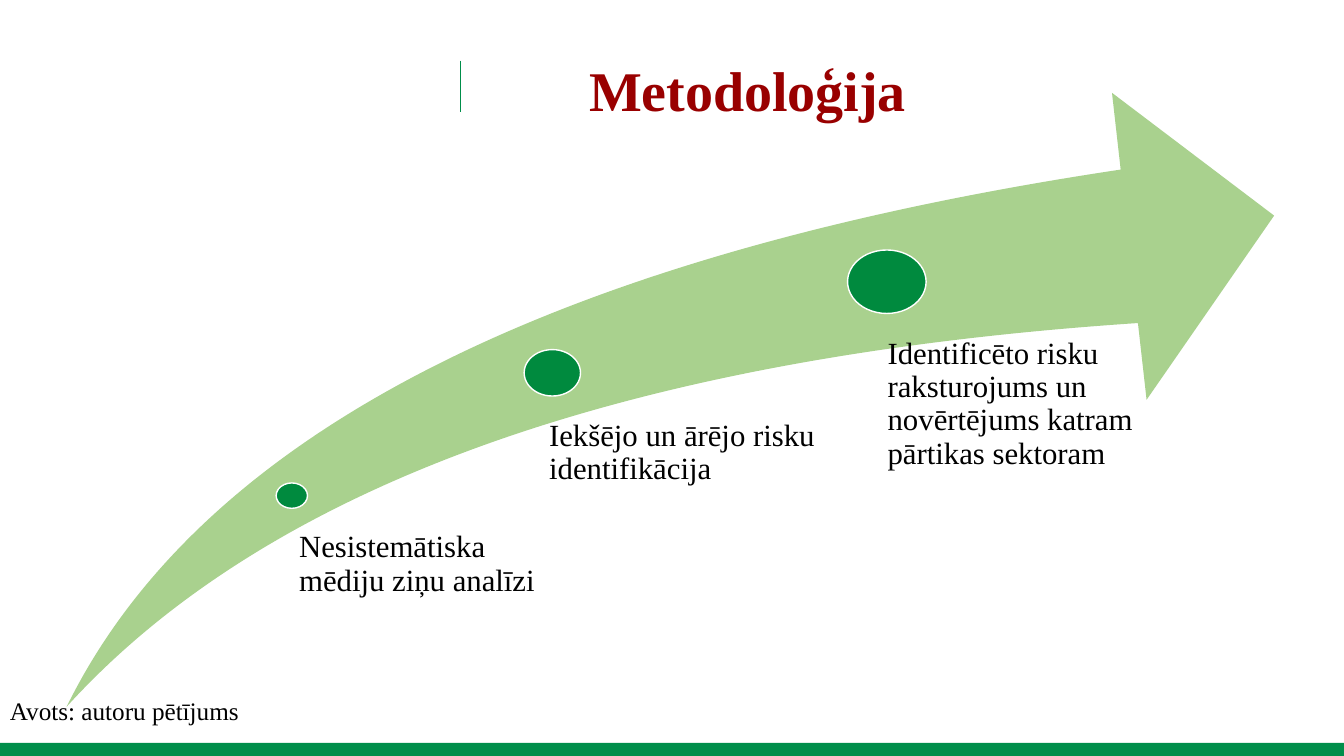
"""Build the methodology slide with a rising arrow and three steps."""
from pptx import Presentation
from pptx.dml.color import RGBColor
from pptx.enum.shapes import MSO_CONNECTOR as Link, MSO_SHAPE as Shape
from pptx.enum.text import MSO_AUTO_SIZE as Fit, PP_ALIGN as Align
from pptx.oxml.ns import qn
from pptx.util import Cm, Pt

TITLE = "Metodoloģija"
SOURCE = "Avots: autoru pētījums"
STEPS = [
    ("Nesistemātiska mēdiju ziņu analīzi",
     (6.96, 12.17, 0.79, 0.64), (7.21, 13.39, 7.09, 3.53), 0.33),
    ("Iekšējo un ārējo risku identifikācija",
     (13.21, 8.81, 1.42, 1.17), (13.23, 10.57, 7.32, 6.05), 0.61),
    ("Identificēto risku raksturojums un novērtējums katram pārtikas sektoram",
     (21.36, 6.3, 1.98, 1.6), (21.51, 8.51, 7.32, 7.92), 0.86),
]
COLORS = {"bar": "008E4A", "arrow": "A9D18E", "dot": "008A3E",
          "edge": "FFFFFF", "title": "990000", "text": "000000"}
FONT = "Times New Roman"
WIDTH, HEIGHT, BAR = 33.87, 19.05, 0.33


def color(name):
    return RGBColor.from_string(COLORS[name])


def add_form(slide, kind, box, fill, edge=None):
    form = slide.shapes.add_shape(kind, *map(Cm, box))
    form.shadow.inherit = False
    form.fill.solid()
    form.fill.fore_color.rgb = color(fill)
    if edge:
        form.line.color.rgb = color(edge)
        form.line.width = Pt(1)
    else:
        form.line.fill.background()
    return form


def add_text(slide, text, box, size, tone="text", bold=False):
    frame = slide.shapes.add_textbox(*map(Cm, box)).text_frame
    frame.word_wrap = True
    run = frame.paragraphs[0].add_run()
    run.text = text
    run.font.name = FONT
    run.font.size = Pt(size)
    run.font.bold = bold
    run.font.color.rgb = color(tone)
    return frame


def add_step(slide, text, dot, box, inset):
    add_form(slide, Shape.OVAL, dot, "dot", "edge")
    frame = add_text(slide, text, box, 22)
    frame.margin_left = Cm(inset)
    frame.margin_top = frame.margin_right = frame.margin_bottom = 0
    frame.paragraphs[0].line_spacing = 0.9


def main():
    deck = Presentation()
    deck.slide_width, deck.slide_height = Cm(WIDTH), Cm(HEIGHT)
    slide = deck.slides.add_slide(deck.slide_layouts[6])

    add_form(slide, Shape.RECTANGLE, (0, HEIGHT - BAR, WIDTH, BAR), "bar")
    rule = slide.shapes.add_connector(
        Link.STRAIGHT, *map(Cm, (11.61, 1.53, 11.61, 2.81)))
    rule.line.color.rgb = color("bar")
    rule.line.width = Pt(0.5)
    props = rule._element.spPr
    props.append(props.makeelement(qn("a:effectLst"), {}))

    arrow = add_form(slide, Shape.SWOOSH_ARROW, (1.68, 2.34, 30.43, 15.47), "arrow")
    arrow.adjustments[0] = arrow.adjustments[1] = 0.25
    for step in STEPS:
        add_step(slide, *step)

    head = add_text(slide, TITLE, (12.4, 1.27, 12.88, 1.96), 40, "title", True)
    head.paragraphs[0].alignment = Align.CENTER
    foot = add_text(slide, SOURCE, (0, 17.4, 6.83, 1.02), 18)
    for frame in (head, foot):
        frame.auto_size = Fit.SHAPE_TO_FIT_TEXT
    deck.save("out.pptx")


if __name__ == "__main__":
    main()
